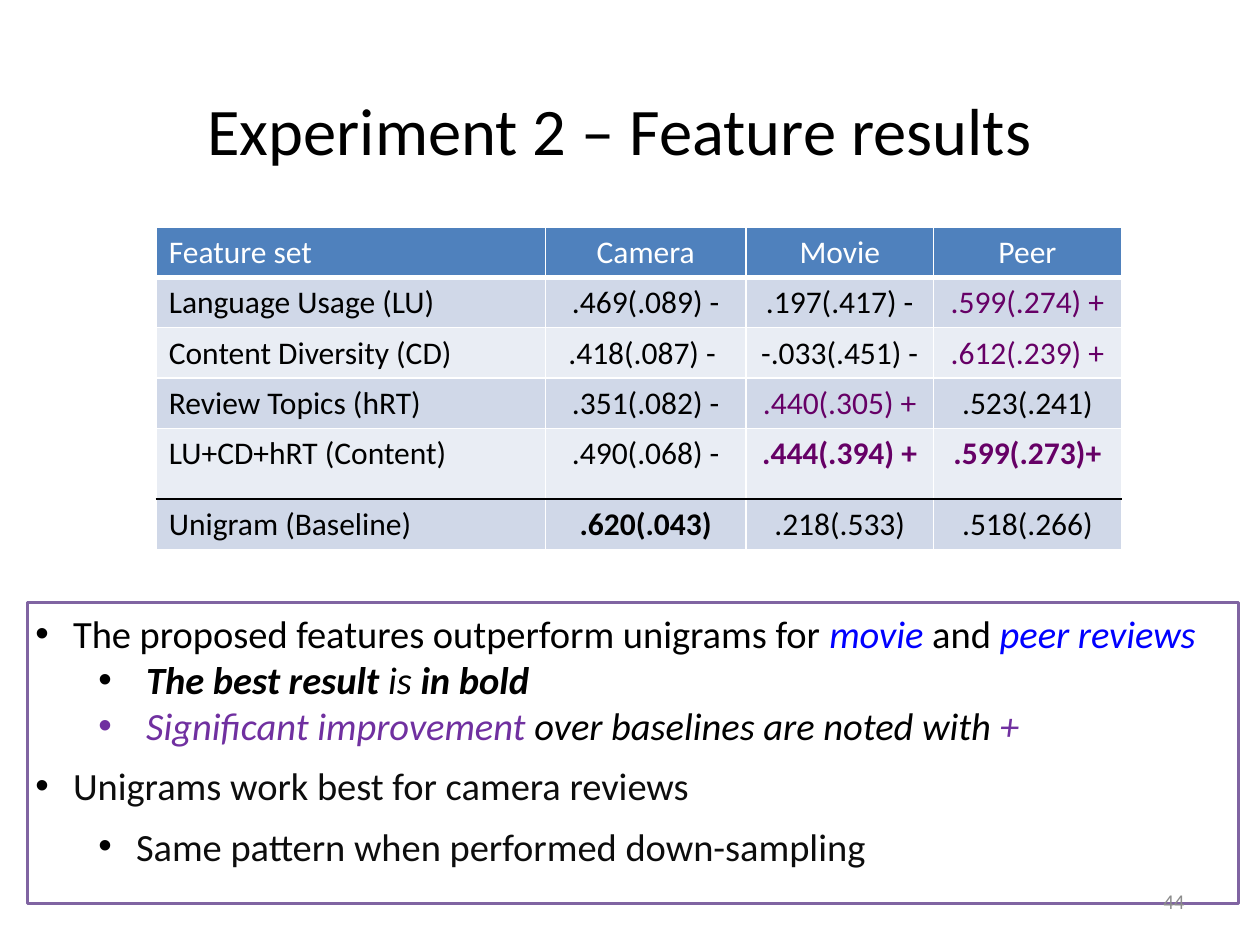
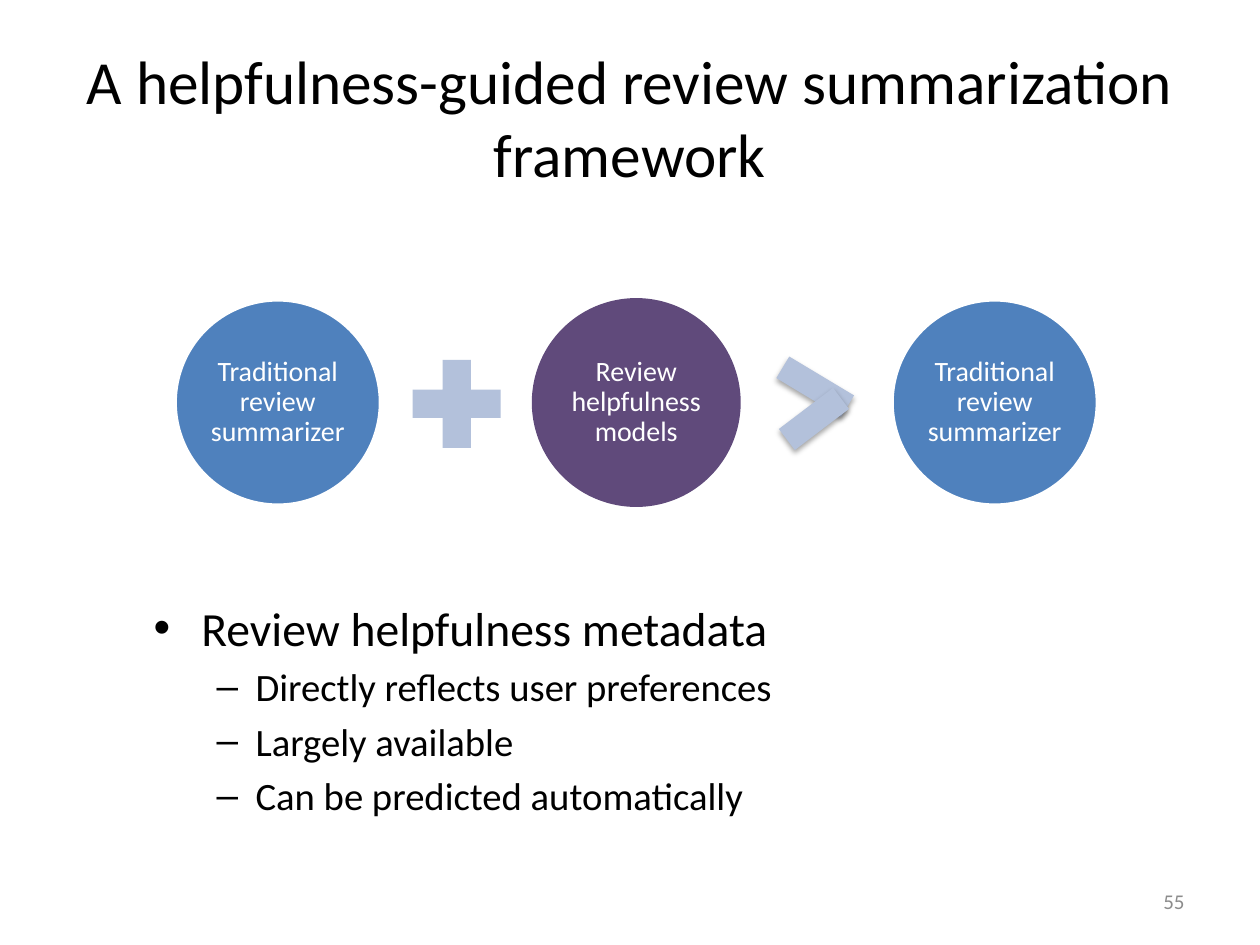
import dataclasses
import typing

import lxml.etree
import pptx
import pptx.dml.color
import pptx.enum.shapes
import pptx.enum.text
import pptx.oxml
import pptx.oxml.ns
import pptx.util

RGBColor = pptx.dml.color.RGBColor
Pt = pptx.util.Pt
Inches = pptx.util.Inches
SHAPE = pptx.enum.shapes.MSO_SHAPE
ALIGN = pptx.enum.text.PP_ALIGN
ANCHOR = pptx.enum.text.MSO_ANCHOR

FONT = "Calibri"
BLACK = RGBColor(0x00, 0x00, 0x00)
WHITE = RGBColor(0xFF, 0xFF, 0xFF)
GRAY = RGBColor(0x8C, 0x8C, 0x8C)
CHARCOAL = RGBColor(0x0D, 0x0D, 0x0D)
BLUE = RGBColor(0x4F, 0x81, 0xBD)
LINK_BLUE = RGBColor(0x00, 0x00, 0xFF)
BAND_DARK = RGBColor(0xD0, 0xD8, 0xE8)
BAND_LIGHT = RGBColor(0xE9, 0xED, 0xF4)
OPERATOR_BLUE = RGBColor(0xB3, 0xC1, 0xDB)
FRAME_PURPLE = RGBColor(0x80, 0x64, 0xA2)
DEEP_PURPLE = RGBColor(0x60, 0x4A, 0x7B)
NOTE_PURPLE = RGBColor(0x70, 0x30, 0xA0)
SIGNIFICANT = RGBColor(0x66, 0x00, 0x66)

SLIDE_WIDTH, SLIDE_HEIGHT = Inches(10), Inches(7.5)
COLUMN = SLIDE_WIDTH / 100
ROW = SLIDE_HEIGHT / 75


@dataclasses.dataclass(frozen=True)
class Area:
    left: float
    top: float
    width: float
    height: float

    def box(self) -> tuple[int, int, int, int]:
        return (round(self.left * COLUMN), round(self.top * ROW),
                round(self.width * COLUMN), round(self.height * ROW))


@dataclasses.dataclass(frozen=True)
class Run:
    text: str
    color: RGBColor = BLACK
    bold: bool = False
    italic: bool = False


@dataclasses.dataclass(frozen=True)
class Paragraph:
    runs: tuple[Run, ...]
    size: float
    format: dict[str, typing.Any] = dataclasses.field(default_factory=dict)
    bullet: str = ""
    bullet_color: RGBColor = BLACK
    indent: float = 0
    hanging: float = 0


@dataclasses.dataclass(frozen=True)
class Circle:
    text: str
    fill: RGBColor
    line: RGBColor


@dataclasses.dataclass(frozen=True)
class Bar:
    area: Area
    rotation: float


PAGE_NUMBER = Area(71.7, 69.5, 23.3, 4)
CENTERED = {"alignment": ALIGN.CENTER}
MIDDLE = {"vertical_anchor": ANCHOR.MIDDLE}

FEATURE_TABLE = Area(12.4, 18, 76.5, 25.6)
FEATURE_COLUMNS = (30.9, 15.9, 14.9, 14.9)
FEATURE_ROWS = (4, 4, 4, 4, 5.6, 4)
FEATURE_RESULTS = (
    ("Feature set", "Camera", "Movie", "Peer"),
    ("Language Usage (LU)", ".469(.089) -", ".197(.417) -", ".599(.274) +"),
    ("Content Diversity (CD)", ".418(.087) - ", "-.033(.451) -", ".612(.239) +"),
    ("Review Topics (hRT)", ".351(.082) -", ".440(.305) +", ".523(.241)"),
    ("LU+CD+hRT (Content)", ".490(.068) -", ".444(.394) +", " .599(.273)+ "),
    ("Unigram (Baseline)", ".620(.043)", ".218(.533)", ".518(.266)"),
)
BEST_CELLS = {(4, 2), (4, 3), (5, 1)}
CONTENT_ROW, BASELINE_ROW = 4, 5

FINDINGS_AREA = Area(2.2, 47.8, 96.1, 23.9)
METADATA_AREA = Area(11.2, 47, 78.5, 16.5)

CIRCLE_SIZE, CIRCLE_LEFT, CIRCLE_TOP, CIRCLE_STEP = 16.3, 13.9, 23.8, 28.45
CIRCLES = (
    Circle("Traditional review summarizer", BLUE, WHITE),
    Circle("Review helpfulness models", DEEP_PURPLE, DEEP_PURPLE),
    Circle("Traditional review summarizer", BLUE, WHITE),
)
PLUS_AREA = Area(31.5, 27.3, 9.5, 9.5)
ARROW_BARS = (
    Bar(Area(61.7, 29.7, 6, 2), 31),
    Bar(Area(61.9, 32.2, 5.4, 2.1), 322.8),
)


def set_format(target: typing.Any, values: dict[str, typing.Any]) -> None:
    for name, value in values.items():
        setattr(target, name, value)


def add_element(parent: typing.Any, tag: str, **attributes: str) -> typing.Any:
    element = lxml.etree.SubElement(parent, pptx.oxml.ns.qn(tag))
    for name, value in attributes.items():
        element.set(name, value)
    return element


def add_bullet(paragraph: typing.Any, content: Paragraph) -> None:
    properties = paragraph._p.get_or_add_pPr()
    properties.set("marL", str(Inches(content.indent)))
    properties.set("indent", str(-Inches(content.hanging)))
    color = add_element(properties, "a:buClr")
    add_element(color, "a:srgbClr", val=str(content.bullet_color))
    add_element(properties, "a:buFont", typeface="Arial")
    add_element(properties, "a:buChar", char=content.bullet)


def write_text(frame: typing.Any, contents: typing.Sequence[Paragraph],
               frame_format: dict[str, typing.Any]) -> None:
    set_format(frame, {"word_wrap": True, **frame_format})
    for index, content in enumerate(contents):
        paragraph = frame.add_paragraph() if index else frame.paragraphs[0]
        set_format(paragraph, content.format)
        if content.bullet:
            add_bullet(paragraph, content)
        for part in content.runs:
            run = paragraph.add_run()
            run.text = part.text
            set_format(run.font, {"name": FONT, "size": Pt(content.size),
                                  "bold": part.bold, "italic": part.italic})
            run.font.color.rgb = part.color


def add_text(slide: typing.Any, area: Area, contents: typing.Sequence[Paragraph],
             frame_format: dict[str, typing.Any]) -> None:
    write_text(slide.shapes.add_textbox(*area.box()).text_frame, contents, frame_format)


def add_shape(slide: typing.Any, kind: typing.Any, area: Area, fill: RGBColor,
              line: RGBColor | None = None) -> typing.Any:
    shape = slide.shapes.add_shape(kind, *area.box())
    shape.shadow.inherit = False
    shape.fill.solid()
    shape.fill.fore_color.rgb = fill
    if line is None:
        shape.line.fill.background()
    else:
        shape.line.color.rgb = line
        shape.line.width = Pt(2)
    return shape


def add_title(slide: typing.Any, area: Area, text: str, size: float,
              frame_format: dict[str, typing.Any]) -> None:
    add_text(slide, area, [Paragraph((Run(text),), size, CENTERED)], {**MIDDLE, **frame_format})


def add_page_number(slide: typing.Any, number: str) -> None:
    content = Paragraph((Run(number, GRAY),), 12, {"alignment": ALIGN.RIGHT})
    add_text(slide, PAGE_NUMBER, [content], MIDDLE)


def add_border(cell: typing.Any, side: str, color: RGBColor, width: float) -> None:
    properties = cell._tc.get_or_add_tcPr()
    line = add_element(properties, f"a:ln{side}", w=str(Pt(width)))
    add_element(add_element(line, "a:solidFill"), "a:srgbClr", val=str(color))


def format_cell(cell: typing.Any, row: int, column: int, text: str) -> None:
    top = BLACK if row == BASELINE_ROW else WHITE
    bottom = BLACK if row == CONTENT_ROW else WHITE
    borders = {"L": (WHITE, 1), "R": (WHITE, 1),
               "T": (top, 3 if row == 1 else 1), "B": (bottom, 1 if row else 3)}
    for side, (color, width) in borders.items():
        add_border(cell, side, color, width)
    cell.fill.solid()
    cell.fill.fore_color.rgb = BLUE if row == 0 else BAND_DARK if row % 2 else BAND_LIGHT
    significant = column > 0 and text.strip().endswith("+")
    color = WHITE if row == 0 else SIGNIFICANT if significant else BLACK
    run = Run(text, color, bold=(row, column) in BEST_CELLS)
    write_text(cell.text_frame, [Paragraph((run,), 18, CENTERED if column else {})], {})


def add_feature_table(slide: typing.Any) -> None:
    table = slide.shapes.add_table(len(FEATURE_ROWS), len(FEATURE_COLUMNS),
                                   *FEATURE_TABLE.box()).table
    set_format(table, {"first_row": False, "horz_banding": False})
    for column, width in zip(table.columns, FEATURE_COLUMNS):
        column.width = round(width * COLUMN)
    for row, height in zip(table.rows, FEATURE_ROWS):
        row.height = round(height * ROW)
    for row_index, texts in enumerate(FEATURE_RESULTS):
        for column_index, text in enumerate(texts):
            format_cell(table.cell(row_index, column_index), row_index, column_index, text)


def add_findings(slide: typing.Any) -> None:
    spaced = {"alignment": ALIGN.LEFT, "space_before": Pt(8)}
    nested = {"alignment": ALIGN.LEFT, "level": 1}

    def main_point(*runs: Run) -> Paragraph:
        return Paragraph(runs, 22, spaced, "•", BLACK, 0.3, 0.3)

    def remark(*runs: Run) -> Paragraph:
        return Paragraph(runs, 22, nested, "•", runs[0].color, 0.88, 0.38)

    contents = (
        main_point(Run("The proposed features outperform unigrams for "),
                   Run("movie ", LINK_BLUE, italic=True), Run("and "),
                   Run("peer reviews", LINK_BLUE, italic=True)),
        remark(Run("The best result ", bold=True, italic=True), Run("is ", italic=True),
               Run("in bold", bold=True, italic=True)),
        remark(Run("Significant improvement ", NOTE_PURPLE, italic=True),
               Run("over baselines are noted with ", italic=True),
               Run("+", NOTE_PURPLE, italic=True)),
        main_point(Run("Unigrams work best for camera reviews", CHARCOAL)),
        Paragraph((Run("Same pattern when performed down-sampling", CHARCOAL),), 22,
                  {**spaced, "level": 1}, "•", BLACK, 0.8, 0.3),
    )
    box = add_shape(slide, SHAPE.RECTANGLE, FINDINGS_AREA, WHITE, FRAME_PURPLE)
    write_text(box.text_frame, contents, {
        "vertical_anchor": ANCHOR.TOP, "margin_left": Inches(0.06),
        "margin_top": Inches(0.06), "margin_bottom": Inches(0.06)})


def add_circles(slide: typing.Any) -> None:
    margins = {f"margin_{side}": Inches(0.02) for side in ("left", "top", "right", "bottom")}
    for index, circle in enumerate(CIRCLES):
        area = Area(CIRCLE_LEFT + index * CIRCLE_STEP, CIRCLE_TOP, CIRCLE_SIZE, CIRCLE_SIZE)
        shape = add_shape(slide, SHAPE.OVAL, area, circle.fill, circle.line)
        content = Paragraph((Run(circle.text, WHITE),), 16, {**CENTERED, "line_spacing": 0.9})
        write_text(shape.text_frame, [content], {**MIDDLE, **margins})


def add_arrow(slide: typing.Any) -> None:
    for bar in ARROW_BARS:
        shape = add_shape(slide, SHAPE.RECTANGLE, bar.area, OPERATOR_BLUE)
        shape.rotation = bar.rotation
        effects = shape._element.spPr.find(pptx.oxml.ns.qn("a:effectLst"))
        shadow = add_element(effects, "a:outerShdw", blurRad=str(Pt(3.1)), dist=str(Pt(1.8)),
                             dir="5400000", rotWithShape="0")
        add_element(add_element(shadow, "a:srgbClr", val=str(BLACK)), "a:alpha", val="35000")


def add_metadata(slide: typing.Any) -> None:
    contents = [Paragraph((Run("Review helpfulness metadata"),), 27.2,
                          {"space_before": Pt(5.4)}, "•", BLACK, 0.38, 0.38)]
    for text in ("Directly reflects user preferences", "Largely available",
                 "Can be predicted automatically"):
        contents.append(Paragraph((Run(text),), 22.1, {"level": 1, "space_before": Pt(4.4)},
                                  "–", BLACK, 0.81, 0.31))
    add_text(slide, METADATA_AREA, contents, {})


def build_results_slide(slide: typing.Any) -> None:
    add_title(slide, Area(5, 2.5, 90, 15.5), "Experiment 2 – Feature results ", 38,
              {"margin_right": Inches(0.14)})
    add_findings(slide)
    add_page_number(slide, "44")
    add_feature_table(slide)


def build_framework_slide(slide: typing.Any) -> None:
    add_title(slide, Area(5, 3, 90, 12.5),
              "A helpfulness-guided review summarization framework", 35, {})
    add_metadata(slide)
    add_circles(slide)
    add_shape(slide, SHAPE.MATH_PLUS, PLUS_AREA, OPERATOR_BLUE)
    add_arrow(slide)
    add_page_number(slide, "55")


def main() -> None:
    presentation = pptx.Presentation()
    set_format(presentation, {"slide_width": SLIDE_WIDTH, "slide_height": SLIDE_HEIGHT})
    for build in (build_results_slide, build_framework_slide):
        build(presentation.slides.add_slide(presentation.slide_layouts[6]))
    presentation.save("out.pptx")


if __name__ == "__main__":
    main()
